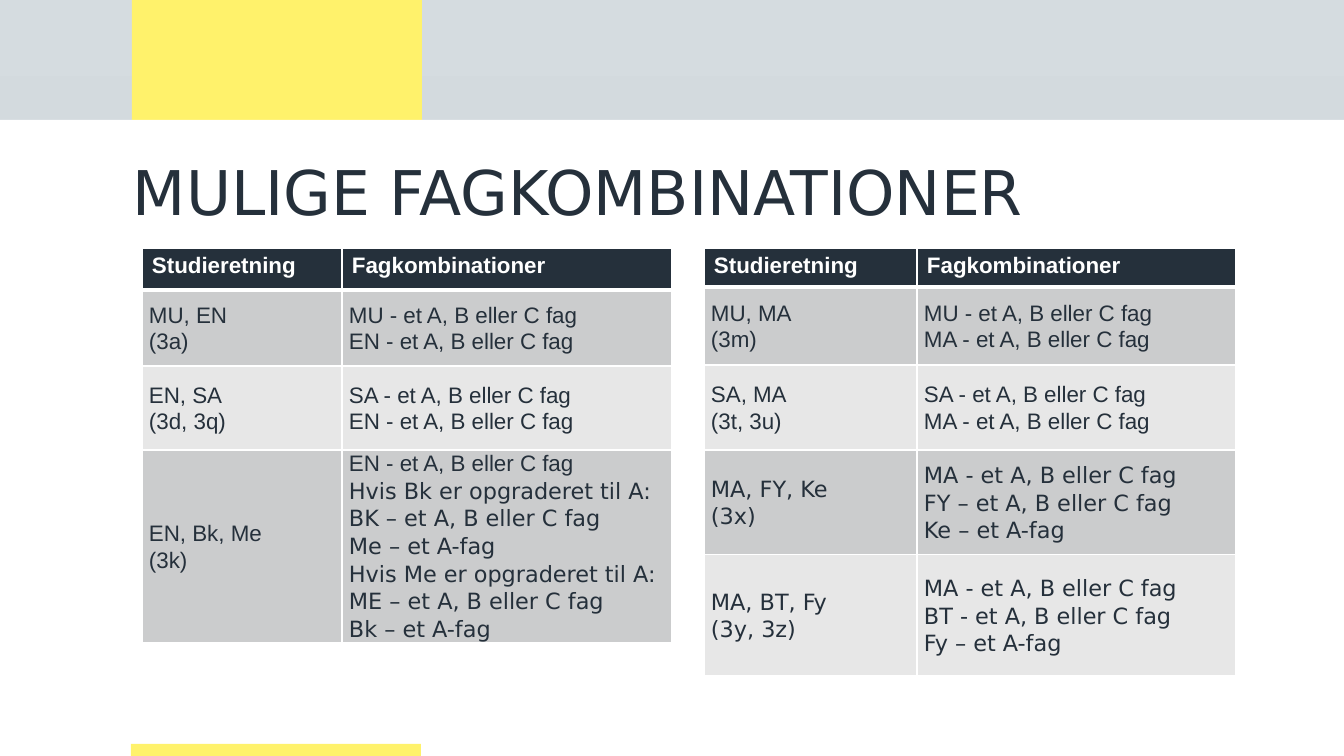
from copy import deepcopy

from lxml import etree
from pptx import Presentation
from pptx import util as u
from pptx.dml import color
from pptx.enum import shapes, text
from pptx.oxml import ns

PX = 9071.43
ARIAL, SANS = "Arial", "DejaVu Sans"
INK, WHITE, YELLOW = "25303B", "FFFFFF", "FFF26B"
BANDS = ["CBCCCD", "E7E7E7"]
HEADINGS = ["Studieretning", "Fagkombinationer"]
ALL_ARIAL = 99

# Each row: height, direction, combinations, index of the first line in SANS
LEFT_ROWS = [
    (76, "MU, EN\v(3a)", ["MU - et A, B eller C fag", "EN - et A, B eller C fag"], ALL_ARIAL),
    (84, "EN, SA\v(3d, 3q)", ["SA - et A, B eller C fag", "EN - et A, B eller C fag"], ALL_ARIAL),
    (192, "EN, Bk, Me\v(3k)", [
        "EN - et A, B eller C fag",
        "Hvis Bk er opgraderet til A:\vBK – et A, B eller C fag",
        "Me – et A-fag",
        "Hvis Me er opgraderet til A:\vME – et A, B eller C fag",
        "Bk – et A-fag"], 2),
]
RIGHT_ROWS = [
    (78, "MU, MA\v(3m)", ["MU - et A, B eller C fag", "MA - et A, B eller C fag"], ALL_ARIAL),
    (85, "SA, MA\v(3t, 3u)", ["SA - et A, B eller C fag", "MA - et A, B eller C fag"], ALL_ARIAL),
    (105, "MA, FY, Ke\v(3x)", [
        "MA - et A, B eller C fag", "FY – et A, B eller C fag", "Ke – et A-fag"], 0),
    (121, "MA, BT, Fy\v(3y, 3z)", [
        "MA - et A, B eller C fag", "BT - et A, B eller C fag", "Fy – et A-fag"], 0),
]


def px(length):
    return u.Emu(round(length * PX))


def rgb(value):
    return color.RGBColor.from_string(value)


def paint_background(page):
    fill = page.background.fill
    fill.gradient()
    fill.gradient_angle = 270
    stop_list = next(page.element.iter(ns.qn("a:gsLst")))
    stop_list.append(deepcopy(stop_list[-1]))
    for stop, position, value in zip(
            fill.gradient_stops, [0, 0.5, 1], ["D5DCE0", "CDD3D7", "A9AEB1"]):
        stop.position = position
        stop.color.rgb = rgb(value)


def add_block(page, left, top, width, height, fill):
    block = page.shapes.add_shape(
        shapes.MSO_SHAPE.RECTANGLE, px(left), px(top), px(width), px(height))
    block.shadow.inherit = False
    block.fill.solid()
    block.fill.fore_color.rgb = rgb(fill)
    block.line.fill.background()


def style_para(para, size, font, ink, bold=False, spacing=None):
    if spacing:
        para.line_spacing = spacing
    for span in para.runs:
        span.font.size = u.Pt(size)
        span.font.name = font
        span.font.bold = bold
        span.font.color.rgb = rgb(ink)
    for line_break in para._p.findall(ns.qn("a:br")):
        line_break.insert(0, deepcopy(para.runs[0]._r.rPr))


def add_title(page, left, top, width, height, words):
    box = page.shapes.add_textbox(px(left), px(top), px(width), px(height))
    frame = box.text_frame
    frame.word_wrap = True
    frame.vertical_anchor = text.MSO_ANCHOR.BOTTOM
    frame.margin_left = frame.margin_right = 0
    frame.margin_top = frame.margin_bottom = 0
    frame.text = words
    style_para(frame.paragraphs[0], 44, SANS, INK, spacing=0.85)


def set_borders(cell, bottom):
    properties = cell._tc.get_or_add_tcPr()
    widths = {"lnL": 1, "lnR": 1, "lnT": 1, "lnB": bottom}
    for index, (side, width) in enumerate(widths.items()):
        line = etree.Element(ns.qn("a:" + side), w=str(u.Pt(width)))
        fill = etree.SubElement(line, ns.qn("a:solidFill"))
        etree.SubElement(fill, ns.qn("a:srgbClr"), val=WHITE)
        properties.insert(index, line)


def fill_cell(cell, fill, words, margin_x, margin_y, bottom=1):
    cell.fill.solid()
    cell.fill.fore_color.rgb = rgb(fill)
    cell.margin_left = cell.margin_right = px(margin_x)
    cell.margin_top = cell.margin_bottom = px(margin_y)
    set_borders(cell, bottom)
    cell.text_frame.text = words
    return cell.text_frame.paragraphs


def add_subject_table(page, left, top, widths, header_height, rows):
    heights = [header_height] + [row[0] for row in rows]
    table = page.shapes.add_table(
        len(heights), len(widths), px(left), px(top),
        px(sum(widths)), px(sum(heights))).table
    table.horz_banding = False
    for column, width in zip(table.columns, widths):
        column.width = px(width)
    for table_row, height in zip(table.rows, heights):
        table_row.height = px(height)
    for column, heading in enumerate(HEADINGS):
        for para in fill_cell(table.cell(0, column), INK, heading, 10, 5, bottom=3):
            style_para(para, 16, ARIAL, WHITE, bold=True)
    for index, (height, direction, combinations, sans_from) in enumerate(rows):
        paras = []
        for column, words in enumerate([direction, "\n".join(combinations)]):
            cell = table.cell(index + 1, column)
            cell.vertical_anchor = text.MSO_ANCHOR.MIDDLE
            paras.extend(fill_cell(cell, BANDS[index % 2], words, 7, 0))
        for order, para in enumerate(paras):
            font = SANS if order >= sans_from else ARIAL
            style_para(para, 16, font, INK, spacing=1.07)


def main():
    deck = Presentation()
    deck.slide_width, deck.slide_height = px(1344), px(756)
    page = deck.slides.add_slide(deck.slide_layouts[6])
    paint_background(page)
    add_block(page, 132, 0, 290, 756, YELLOW)
    add_block(page, 0, 120, 1344, 636, WHITE)
    add_block(page, 131, 744, 290, 12, YELLOW)
    add_subject_table(page, 142, 248, [200, 330], 42, LEFT_ROWS)
    add_title(page, 133, 141, 1080, 87, "MULIGE FAGKOMBINATIONER")
    add_subject_table(page, 704, 248, [213, 319], 39, RIGHT_ROWS)
    deck.save("out.pptx")


if __name__ == "__main__":
    main()
